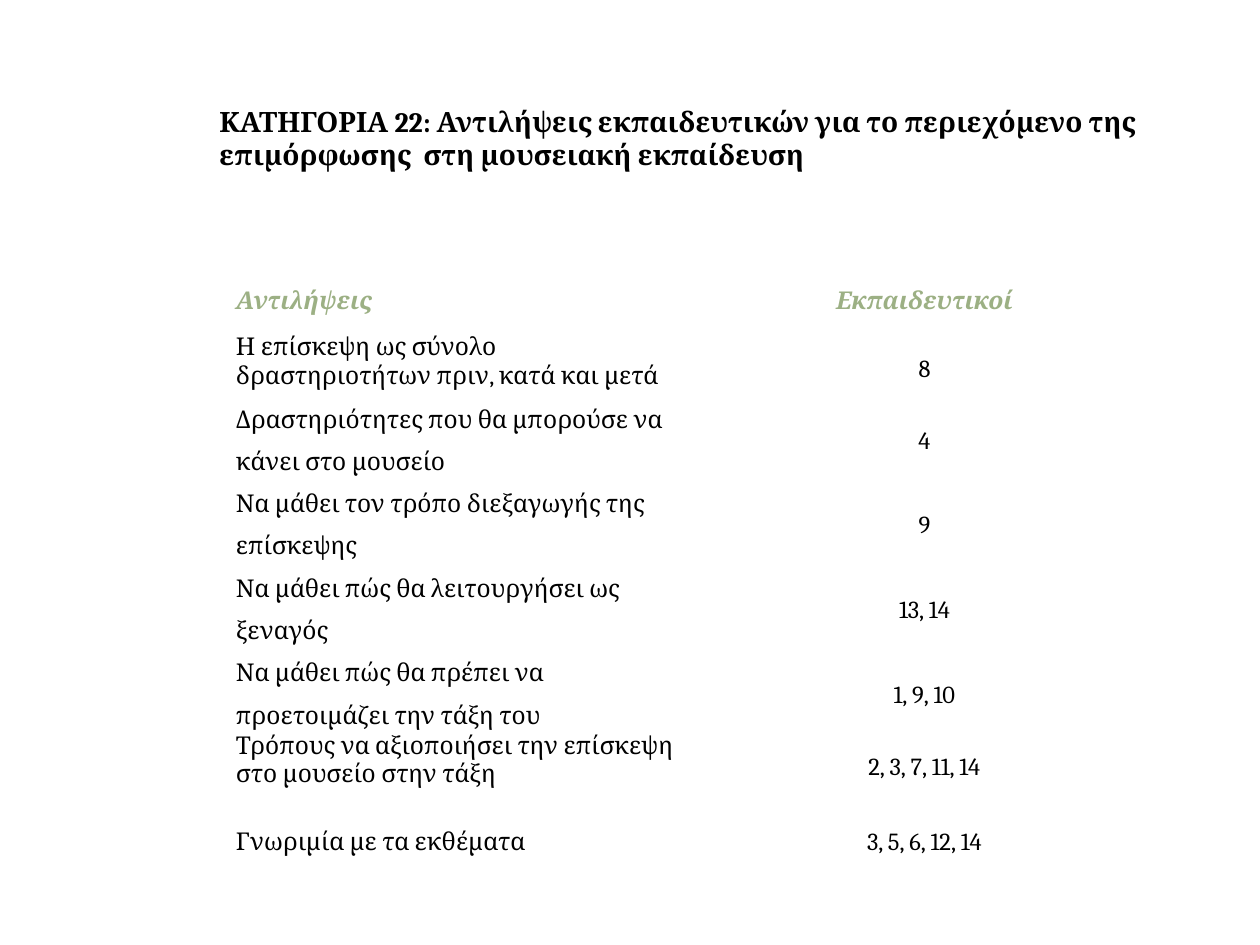
import pptx
import pptx.dml.color
import pptx.enum.text
import pptx.util

ALIGN = pptx.enum.text.PP_ALIGN
ANCHOR = pptx.enum.text.MSO_ANCHOR


def px(length):
    return pptx.util.Emu(round(length * 914400 / 126))


def color(value):
    return pptx.dml.color.RGBColor.from_string(value)


def apply(target, formats):
    for name, value in formats.items():
        setattr(target, name, value)


class SlideBuilder:
    font_name = "Cambria"
    ink = "000000"
    accent = "9CB084"
    title_size = 16
    body_size = 14
    cell_format = {
        "vertical_anchor": ANCHOR.MIDDLE,
        "margin_left": px(9),
        "margin_right": px(9),
        "margin_top": 0,
        "margin_bottom": 0,
    }

    def __init__(self, slide):
        self.slide = slide

    def wording(self, frame, text, size, ink, paragraph_format, **font_format):
        paragraph = frame.paragraphs[0]
        apply(paragraph, paragraph_format)
        run = paragraph.add_run()
        run.text = text
        apply(run.font, {"name": self.font_name, "size": pptx.util.Pt(size), **font_format})
        run.font.color.rgb = color(ink)

    def title(self, text, left, top, width, height):
        box = self.slide.shapes.add_textbox(px(left), px(top), px(width), px(height))
        apply(box.text_frame, {
            "word_wrap": True,
            "auto_size": pptx.enum.text.MSO_AUTO_SIZE.SHAPE_TO_FIT_TEXT,
        })
        self.wording(box.text_frame, text, self.title_size, self.ink, {}, bold=True)

    def cell(self, cell, text, heading, alignment, spacing):
        apply(cell, self.cell_format)
        cell.fill.background()
        self.wording(
            cell.text_frame, text, self.body_size,
            self.accent if heading else self.ink,
            {"alignment": alignment, "line_spacing": spacing},
            bold=heading, italic=heading,
        )

    def table(self, headings, answers, row_heights, left, top, width, height):
        frame = self.slide.shapes.add_table(
            len(row_heights), len(headings), px(left), px(top), px(width), px(height))
        table = frame.table
        apply(table, {"first_row": False, "horz_banding": False})
        for row, row_height in zip(table.rows, row_heights):
            row.height = px(row_height)
        for column, heading in enumerate(headings):
            alignment = ALIGN.CENTER if column else ALIGN.LEFT
            self.cell(table.cell(0, column), heading, True, alignment, None)
        for row, (view, teachers, view_spacing) in enumerate(answers, 1):
            self.cell(table.cell(row, 0), view, False, ALIGN.LEFT, view_spacing)
            self.cell(table.cell(row, 1), teachers, False, ALIGN.CENTER, 1.5)
        frame.height = px(height)


HEADINGS = ("Αντιλήψεις", "Εκπαιδευτικοί")
ANSWERS = (
    ("Η επίσκεψη ως σύνολο δραστηριοτήτων πριν, κατά και μετά", "8", None),
    ("Δραστηριότητες που θα μπορούσε να κάνει στο μουσείο", "4", 1.5),
    ("Να μάθει τον τρόπο διεξαγωγής της επίσκεψης", "9", 1.5),
    ("Να μάθει πώς θα λειτουργήσει ως ξεναγός", "13, 14", 1.5),
    ("Να μάθει πώς θα πρέπει να προετοιμάζει την τάξη του", "1, 9, 10", 1.5),
    ("Τρόπους να αξιοποιήσει την επίσκεψη στο μουσείο στην τάξη", "2, 3, 7, 11, 14", None),
    ("Γνωριμία με τα εκθέματα", "3, 5, 6, 12, 14", 1.5),
)
ROW_HEIGHTS = (60, 60, 60, 82, 60, 60, 60, 91)


def main():
    presentation = pptx.Presentation()
    apply(presentation, {"slide_width": px(1260), "slide_height": px(945)})
    builder = SlideBuilder(presentation.slides.add_slide(presentation.slide_layouts[6]))
    builder.table(HEADINGS, ANSWERS, ROW_HEIGHTS, 227, 272, 930, 597)
    builder.title(
        "ΚΑΤΗΓΟΡΙΑ 22: Αντιλήψεις εκπαιδευτικών για το περιεχόμενο της "
        "επιμόρφωσης  στη μουσειακή εκπαίδευση",
        207, 98, 984, 81)
    presentation.save("out.pptx")


if __name__ == "__main__":
    main()
